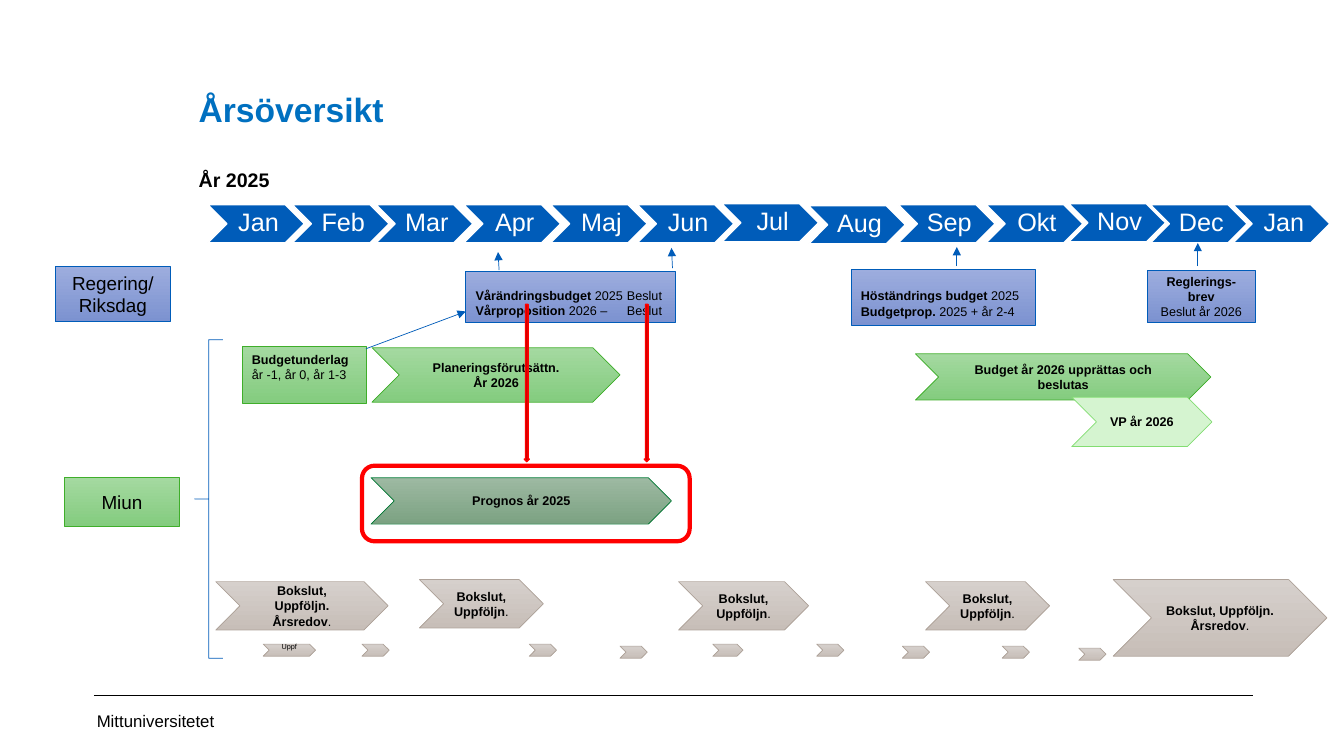
from lxml import etree
from pptx import Presentation
from pptx import util as u
from pptx.dml.color import RGBColor
from pptx.enum import shapes, text
from pptx.oxml.ns import qn

KIND = shapes.MSO_SHAPE
LEFT, CENTER = text.PP_ALIGN.LEFT, text.PP_ALIGN.CENTER
TOP, MIDDLE = text.MSO_ANCHOR.TOP, text.MSO_ANCHOR.MIDDLE
BLACK, WHITE, BLUE, RED = "000000", "FFFFFF", "005CB9", "FF0000"

# Each look: fill (one colour, a top and bottom colour, or None), line colour, line width
LOOKS = {
    "month": (BLUE, WHITE, 1),
    "state": (("9DADDE", "7C92D0"), BLUE, 0.5),
    "green": (("A4D9A0", "84CC7F"), "3FAE2A", 0.5),
    "pale": ("D5F4D0", "82DD71", 0.5),
    "forecast": (("9DB9A2", "7CA282"), "007934", 0.5),
    "closing": (("D6D0CC", "C7BEB8"), "AEA299", 0.5),
    "brace": (None, BLUE, 0.5),
    "frame": (None, RED, 3),
    "marker": ("CC0000", RED, 1),
}


def color(value):
    return RGBColor.from_string(value)


def set_all(target, values):
    for name, value in values.items():
        setattr(target, name, value)


class YearPage:
    """One slide with its style; ** in wording switches bold on and off."""

    font = "Arial"

    def __init__(self, deck):
        self.page = deck.slides.add_slide(deck.slide_layouts[5])

    def fill_text(self, box, lines, size=9, hue=BLACK, align=CENTER, anchor=MIDDLE,
                  insets=(0.1, 0.05, 0.1, 0.05), wrap=True, tab=None, para_format=None):
        frame = box.text_frame
        left, top, right, bottom = map(u.Inches, insets)
        set_all(frame, {"auto_size": text.MSO_AUTO_SIZE.NONE, "word_wrap": wrap,
                        "vertical_anchor": anchor, "margin_left": left, "margin_top": top,
                        "margin_right": right, "margin_bottom": bottom})
        for number, line in enumerate(lines):
            para = frame.add_paragraph() if number else frame.paragraphs[0]
            set_all(para, {"alignment": align, **(para_format or {})})
            if tab:
                stops = etree.SubElement(para._p.get_or_add_pPr(), qn("a:tabLst"))
                etree.SubElement(stops, qn("a:tab"), pos=str(u.Inches(tab)), algn="l")
            for part, words in enumerate(line.split("**")):
                if words:
                    span = para.add_run()
                    span.text = words
                    set_all(span.font, {"name": self.font, "size": u.Pt(size), "bold": part % 2 == 1})
                    span.font.color.rgb = color(hue)

    def title(self, place, heading, year):
        box = self.page.shapes.title
        set_all(box, dict(zip(("left", "top", "width", "height"), map(u.Inches, place))))
        self.fill_text(box, [f"**{heading}**", f"**{year}**"], size=24, hue="0070C0", align=LEFT,
                       anchor=TOP, para_format={"line_spacing": u.Pt(15)})
        sub = box.text_frame.paragraphs[1]
        sub.space_before = u.Pt(30)
        sub.runs[0].font.size = u.Pt(14)
        sub.runs[0].font.color.rgb = color(BLACK)

    def label(self, place, words, **style):
        box = self.page.shapes.add_textbox(*map(u.Inches, place))
        self.fill_text(box, [words], **style)

    def shape(self, kind, place, look, lines=(), adjust=(), **style):
        box = self.page.shapes.add_shape(kind, *map(u.Inches, place))
        box.shadow.inherit = False
        for number, value in enumerate(adjust):
            box.adjustments[number] = value
        fill, line, width = LOOKS[look]
        if fill is None:
            box.fill.background()
        elif isinstance(fill, str):
            box.fill.solid()
            box.fill.fore_color.rgb = color(fill)
        else:
            box.fill.gradient()
            box.fill.gradient_angle = 270
            for stop, shade in zip(box.fill.gradient_stops, fill):
                stop.color.rgb = color(shade)
        box.line.color.rgb = color(line)
        box.line.width = u.Pt(width)
        if lines:
            self.fill_text(box, lines, **style)

    def line(self, ends, hue=BLUE, width=0.5, arrow=True):
        link = self.page.shapes.add_connector(shapes.MSO_CONNECTOR.STRAIGHT, *map(u.Inches, ends))
        link.line.color.rgb = color(hue)
        link.line.width = u.Pt(width)
        if arrow:
            outline = link._element.spPr.find(qn("a:ln"))
            etree.SubElement(outline, qn("a:tailEnd"), type="triangle")
        etree.SubElement(link._element.spPr, qn("a:effectLst"))


def main():
    deck = Presentation()
    deck.slide_width, deck.slide_height = u.Inches(13.33), u.Inches(7.5)
    year = YearPage(deck)

    # Title and footer
    year.title((1.87, 1.02, 11.3, 1.13), "Årsöversikt", "År 2025")
    year.label((0.92, 6.95, 3, 0.4), "Mittuniversitetet", size=12, align=LEFT,
               insets=(0.04, 0.05, 0.1, 0.05))
    year.line((0.93, 6.9, 12.43, 6.9), BLACK, 0.25, arrow=False)

    # Month row
    months = [("Jan", 2.06, 2.03), ("Feb", 2.9, 2.03), ("Mar", 3.73, 2.03), ("Apr", 4.6, 2.03),
              ("Maj", 5.46, 2.03), ("Jun", 6.32, 2.03), ("Jul", 7.16, 2.02), ("Aug", 8.02, 2.04),
              ("Sep", 8.91, 2.03), ("Okt", 9.78, 2.03), ("Nov", 10.6, 2.02), ("Dec", 11.41, 2.03),
              ("Jan", 12.23, 2.03)]
    for month, left, top in months:
        year.shape(KIND.CHEVRON, (left, top, 0.96, 0.38), "month", [month], size=18, hue=WHITE,
                   insets=(0.08, 0.03, 0.03, 0.03), wrap=False, para_format={"line_spacing": 0.9})

    # Row headings and brace
    for place, look, lines in [((0.55, 2.64, 1.14, 0.55), "state", ["Regering/", "Riksdag"]),
                               ((0.64, 4.74, 1.14, 0.48), "green", ["Miun"])]:
        year.shape(KIND.RECTANGLE, place, look, lines, size=13.5, insets=(0.07, 0.04, 0.07, 0.04))
    year.shape(KIND.LEFT_BRACE, (1.93, 3.37, 0.28, 3.16), "brace", adjust=(0, 0.5))

    # Government and parliament
    year.shape(KIND.RECTANGLE, (8.44, 2.67, 1.83, 0.56), "state",
               ["**Höständrings budget **2025", "**Budgetprop. **2025 + år 2-4"],
               align=LEFT, anchor=TOP, insets=(0.1, 0.19, 0.1, 0.05))
    year.shape(KIND.RECTANGLE, (4.62, 2.69, 2.08, 0.51), "state",
               ["**Vårändringsbudget** 2025\tBeslut", "**Vårproposition** 2026 –\tBeslut"],
               align=LEFT, insets=(0.1, 0.17, 0.1, 0.05), tab=1.5)
    year.shape(KIND.RECTANGLE, (11.38, 2.68, 1.07, 0.52), "state",
               ["**Reglerings-brev**", "Beslut år 2026"])

    # University planning
    year.shape(KIND.RECTANGLE, (2.4, 3.44, 1.23, 0.56), "green",
               ["**Budgetunderlag **år -1, år 0, år 1-3"], align=LEFT, anchor=TOP)
    plans = [((3.69, 3.45, 2.46, 0.54), "green", ["**Planeringsförutsättn.**", "**År 2026**"]),
             ((9.08, 3.51, 2.93, 0.46), "green", ["**Budget år 2026 upprättas och beslutas**"]),
             ((10.63, 3.94, 1.39, 0.49), "pale", ["**VP år 2026**"]),
             ((3.68, 4.74, 2.98, 0.46), "forecast", ["**Prognos år 2025**"])]
    for place, look, lines in plans:
        year.shape(KIND.CHEVRON, place, look, lines)

    # Closing of accounts
    follow_up = ["**Bokslut, Uppföljn**."]
    annual = ["**Bokslut, Uppföljn.**", "**Årsredov**."]
    closings = [((2.14, 5.77, 1.71, 0.48), annual), ((4.16, 5.75, 1.23, 0.48), follow_up),
                ((6.73, 5.77, 1.29, 0.48), follow_up), ((9.18, 5.77, 1.23, 0.48), follow_up),
                ((11.04, 5.75, 2.12, 0.76), annual)]
    for place, lines in closings:
        year.shape(KIND.CHEVRON, place, "closing", lines)

    # Monthly follow-up
    year.shape(KIND.CHEVRON, (2.61, 6.39, 0.52, 0.12), "closing", ["Uppf"], size=5.2,
               insets=(0, 0, 0, 0.08), wrap=False)
    for left, top, width in [(3.59, 6.39, 0.27), (5.25, 6.39, 0.27), (6.15, 6.41, 0.27),
                             (7.07, 6.39, 0.3), (8.1, 6.39, 0.27), (8.95, 6.41, 0.27),
                             (9.94, 6.41, 0.27), (10.7, 6.43, 0.27)]:
        year.shape(KIND.CHEVRON, (left, top, width, 0.12), "closing")

    # Arrows to the months and to the spring budget
    for ends in [(9.49, 2.64, 9.49, 2.45), (11.88, 2.64, 11.88, 2.41), (4.95, 2.68, 4.94, 2.5),
                 (6.67, 2.66, 6.66, 2.46), (3.63, 3.46, 4.62, 3.09)]:
        year.line(ends)

    # Red emphasis on the forecast
    year.shape(KIND.ROUNDED_RECTANGLE, (3.59, 4.62, 3.25, 0.75), "frame")
    for left in (6.39, 5.2):
        year.shape(KIND.DOWN_ARROW, (left, 3.02, 0.05, 1.56), "marker")

    deck.save("out.pptx")


if __name__ == "__main__":
    main()
